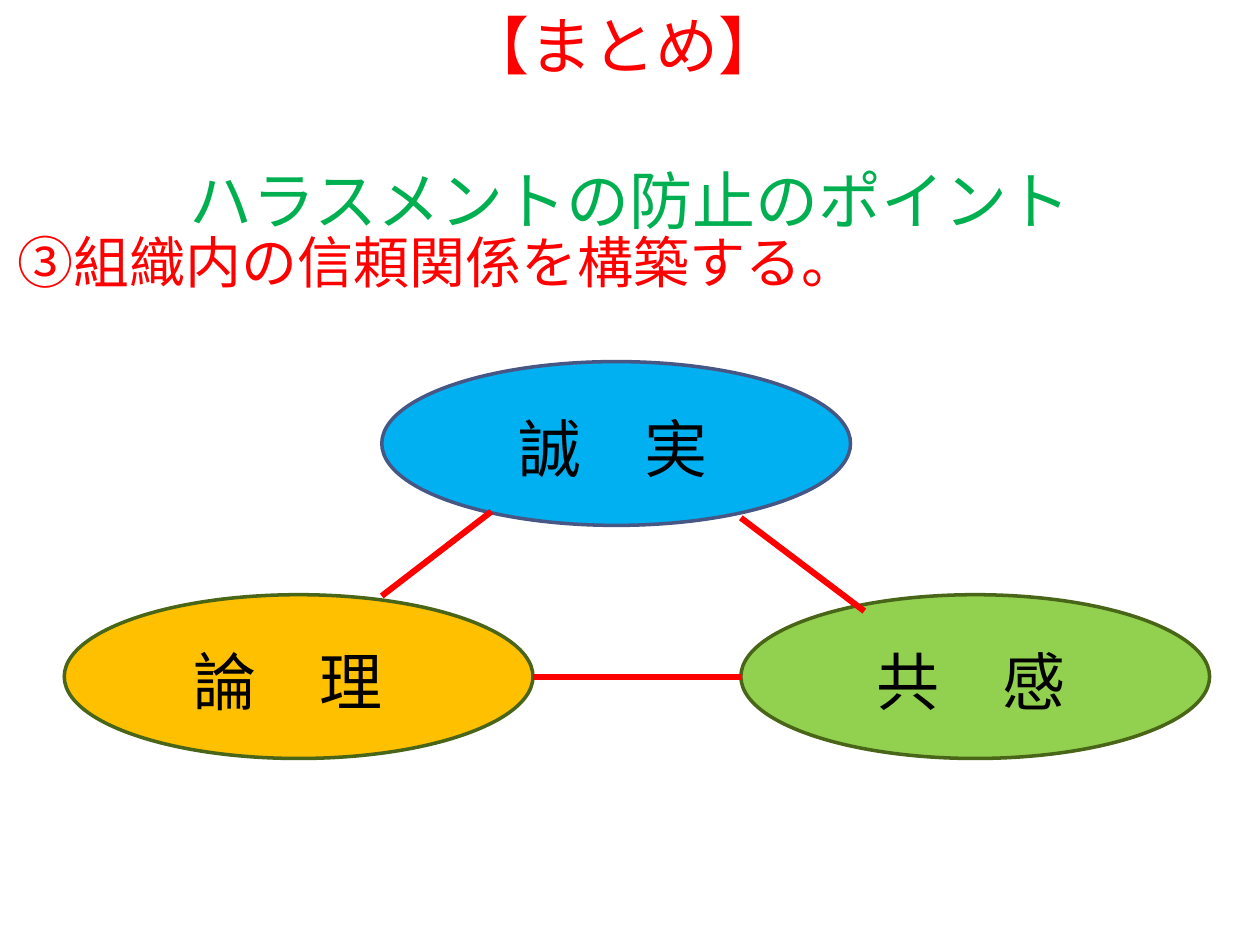
import pptx
import pptx.util
import pptx.dml.color
import pptx.enum.shapes
import pptx.enum.text
import pptx.oxml.ns
from dataclasses import dataclass
from lxml import etree

Inches = pptx.util.Inches
Pt = pptx.util.Pt
Align = pptx.enum.text.PP_ALIGN


@dataclass(frozen=True)
class Theme:
    font: str = "Noto Sans CJK JP"
    red: str = "FF0000"
    green: str = "00B050"
    black: str = "000000"
    sky: str = "00B0F0"
    lime: str = "92D050"
    gold: str = "FFC000"
    navy: str = "475785"
    olive: str = "496517"
    large: int = 36
    small: int = 32
    edge: float = 2
    link: float = 3.5


THEME = Theme()
OVAL = (3.72, 1.3)
LABEL = (1.86, 0.76)


def rgb(code):
    return pptx.dml.color.RGBColor.from_string(code)


def add_child(parent, tag):
    return etree.SubElement(parent, pptx.oxml.ns.qn(tag))


def style(para, size, color, align):
    """Set one paragraph's look, for Latin and East Asian letters alike."""
    para.alignment = align
    font = para.font
    font.size = Pt(size)
    font.color.rgb = rgb(color)
    font.name = THEME.font
    props = para._p.pPr.find(pptx.oxml.ns.qn("a:defRPr"))
    add_child(props, "a:ea").set("typeface", THEME.font)


def add_text(slide, box, lines):
    """Add a text box; each line is (text, size, color, alignment)."""
    frame = slide.shapes.add_textbox(*map(Inches, box)).text_frame
    frame.word_wrap = True
    for i, (text, *look) in enumerate(lines):
        para = frame.add_paragraph() if i else frame.paragraphs[0]
        para.text = text
        style(para, *look)
    return frame


def add_oval(slide, left, top, fill, edge):
    oval = slide.shapes.add_shape(
        pptx.enum.shapes.MSO_SHAPE.OVAL, *map(Inches, (left, top, *OVAL)))
    oval.shadow.inherit = False
    oval.fill.solid()
    oval.fill.fore_color.rgb = rgb(fill)
    oval.line.color.rgb = rgb(edge)
    oval.line.width = Pt(THEME.edge)


def add_link(slide, *ends):
    link = slide.shapes.add_connector(
        pptx.enum.shapes.MSO_CONNECTOR.STRAIGHT, *map(Inches, ends))
    link.line.color.rgb = rgb(THEME.red)
    link.line.width = Pt(THEME.link)
    add_child(link._element.spPr, "a:effectLst")


def main():
    deck = pptx.Presentation()
    deck.slide_width, deck.slide_height = Inches(10), Inches(7.5)
    slide = deck.slides.add_slide(deck.slide_layouts[6])

    body = add_text(slide, (0.04, 1.23, 9.92, 5.98), [
        ("ハラスメントの防止のポイント", THEME.large, THEME.green, Align.CENTER),
        ("③組織内の信頼関係を構築する。", THEME.small, THEME.red, Align.JUSTIFY),
    ])
    point = body.paragraphs[1]
    point.space_before = Pt(4.8)
    point.line_spacing = 0.71

    add_text(slide, (0.83, 0, 8.25, 0.92), [
        ("【まとめ】", THEME.large, THEME.red, Align.CENTER)])

    # word, oval left and top, label left, fill, edge
    values = [
        ("誠　実", 3.03, 2.87, 4.02, THEME.sky, THEME.navy),
        ("共　感", 5.88, 4.72, 6.86, THEME.lime, THEME.olive),
        ("論　理", 0.51, 4.72, 1.44, THEME.gold, THEME.olive),
    ]
    for word, left, top, start, fill, edge in values:
        add_oval(slide, left, top, fill, edge)
        add_text(slide, (start, top + 0.33, *LABEL), [
            (word, THEME.large, THEME.black, Align.JUSTIFY)])

    add_link(slide, 3.9, 4.06, 3.03, 4.73)
    add_link(slide, 5.88, 4.11, 6.86, 4.85)
    add_link(slide, 4.23, 5.37, 5.88, 5.37)

    deck.save("out.pptx")


if __name__ == "__main__":
    main()
